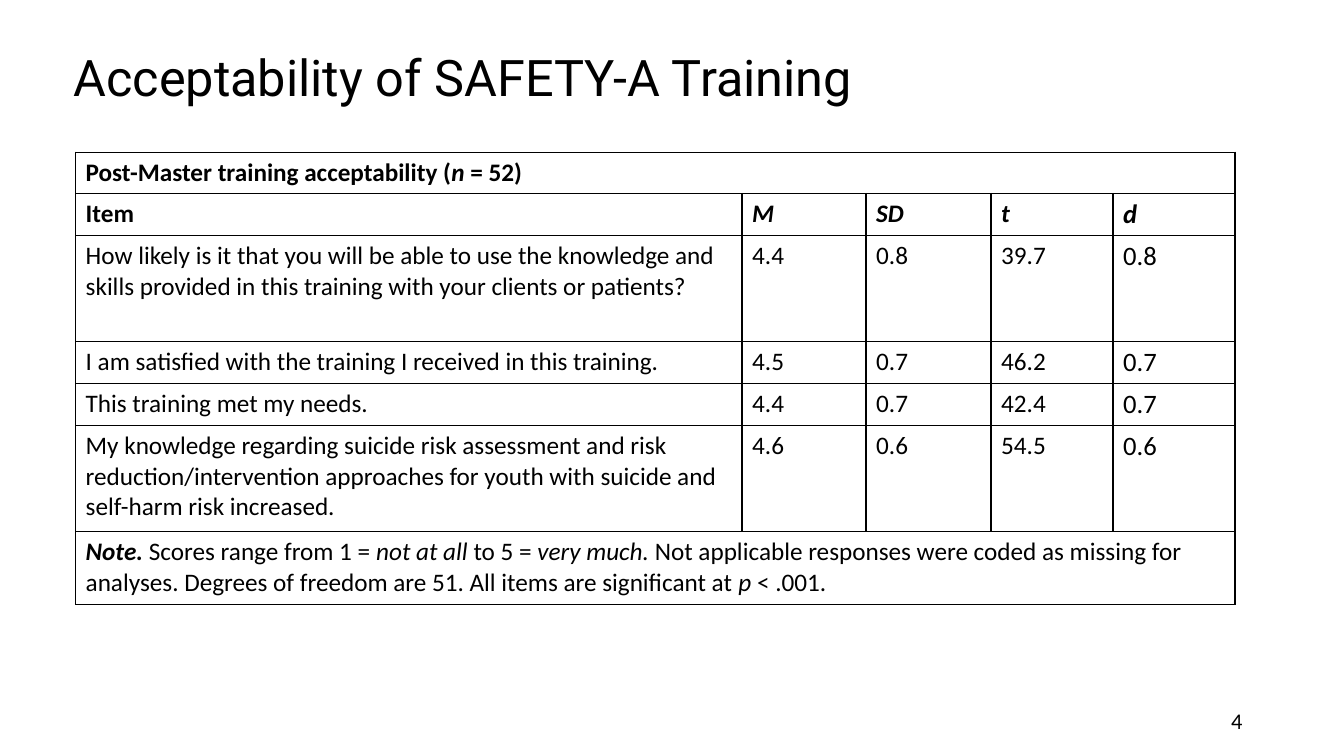
from dataclasses import dataclass

from lxml.etree import SubElement
from pptx import Presentation
from pptx.dml.color import RGBColor
from pptx.enum.text import MSO_ANCHOR, PP_ALIGN
from pptx.oxml.ns import qn
from pptx.util import Inches, Pt


@dataclass(frozen=True)
class Theme:
    ink: str = "000000"
    paper: str = "FFFFFF"
    title_font: str = "Roboto"
    body_font: str = "Calibri"
    title_size: int = 36
    body_size: int = 18
    effect_size: int = 19
    number_size: int = 16


theme = Theme()


def write(frame, runs, font, size, bold=False):
    """Fill a frame with (text, style) runs; style holds b and/or i."""
    paragraph = frame.paragraphs[0]
    paragraph.font.name = font
    paragraph.font.size = Pt(size)
    paragraph.font.color.rgb = RGBColor.from_string(theme.ink)
    paragraph.font.bold = bold
    for text, style in runs:
        run = paragraph.add_run()
        run.text = text
        if "b" in style:
            run.font.bold = True
        if "i" in style:
            run.font.italic = True
    return paragraph


def draw_borders(cell):
    """Rule all four sides of a cell; the lines must precede the fill."""
    properties = cell._tc.get_or_add_tcPr()
    for side in ("a:lnL", "a:lnR", "a:lnT", "a:lnB"):
        line = SubElement(properties, qn(side), w=str(Pt(1)))
        fill = SubElement(line, qn("a:solidFill"))
        SubElement(fill, qn("a:srgbClr"), val=theme.ink)


presentation = Presentation()
presentation.slide_width = Inches(13.33)
presentation.slide_height = Inches(7.5)
slide = presentation.slides.add_slide(presentation.slide_layouts[6])

# Title
title = slide.shapes.add_textbox(Inches(0.63), Inches(0.48), Inches(12.08), Inches(0.94)).text_frame
title.word_wrap = True
heading = write(title, [("Acceptability of SAFETY-A Training", "")], theme.title_font, theme.title_size)
heading.line_spacing = 0.9

# Table content: caption and note span the full width
caption = [("Post-Master training acceptability (", ""), ("n ", "i"), ("= 52)", "")]
headers = [("Item", ""), ("M", "i"), ("SD", "i"), ("t", "i"), ("d", "i")]
items = [
    ("How likely is it that you will be able to use the knowledge and skills provided "
     "in this training with your clients or patients?", "4.4", "0.8", "39.7", "0.8"),
    ("I am satisfied with the training I received in this training.", "4.5", "0.7", "46.2", "0.7"),
    ("This training met my needs.", "4.4", "0.7", "42.4", "0.7"),
    ("My knowledge regarding suicide risk assessment and risk reduction/intervention "
     "approaches for youth with suicide and self-harm risk increased.", "4.6", "0.6", "54.5", "0.6"),
]
note = [
    ("Note. ", "bi"), ("Scores range from 1 = ", ""), ("not at all ", "i"), ("to 5 = ", ""),
    ("very much. ", "i"),
    ("Not applicable responses were coded as missing for analyses. "
     "Degrees of freedom are 51. All items are significant at ", ""),
    ("p ", "i"), ("< .001.", ""),
]
rows = [
    [caption],
    [[header] for header in headers],
    *[[[(value, "")] for value in item] for item in items],
    [note],
]
column_widths = [6.61, 1.23, 1.24, 1.21, 1.21]
row_heights = [0.41, 0.41, 1.05, 0.41, 0.41, 1.05, 0.73]

# Table grid
ratings = slide.shapes.add_table(
    len(rows), len(column_widths), Inches(0.75), Inches(1.51),
    Inches(sum(column_widths)), Inches(sum(row_heights))).table
ratings.first_row = False
ratings.horz_banding = False
for column, width in zip(ratings.columns, column_widths):
    column.width = Inches(width)
for row, height in zip(ratings.rows, row_heights):
    row.height = Inches(height)
for cell in ratings.iter_cells():
    draw_borders(cell)
    cell.fill.solid()
    cell.fill.fore_color.rgb = RGBColor.from_string(theme.paper)

# Table text: the first two rows are bold, the effect size column is larger
last_column = len(column_widths) - 1
for row_index, row_content in enumerate(rows):
    if len(row_content) == 1:
        ratings.cell(row_index, 0).merge(ratings.cell(row_index, last_column))
    for column_index, runs in enumerate(row_content):
        size = theme.effect_size if column_index == last_column else theme.body_size
        write(ratings.cell(row_index, column_index).text_frame, runs,
              theme.body_font, size, bold=row_index < 2)

# Slide number
slide_number = slide.shapes.add_textbox(Inches(9.42), Inches(6.95), Inches(3), Inches(0.4)).text_frame
slide_number.word_wrap = True
slide_number.vertical_anchor = MSO_ANCHOR.MIDDLE
write(slide_number, [("4", "")], theme.body_font, theme.number_size).alignment = PP_ALIGN.RIGHT

presentation.save("out.pptx")
